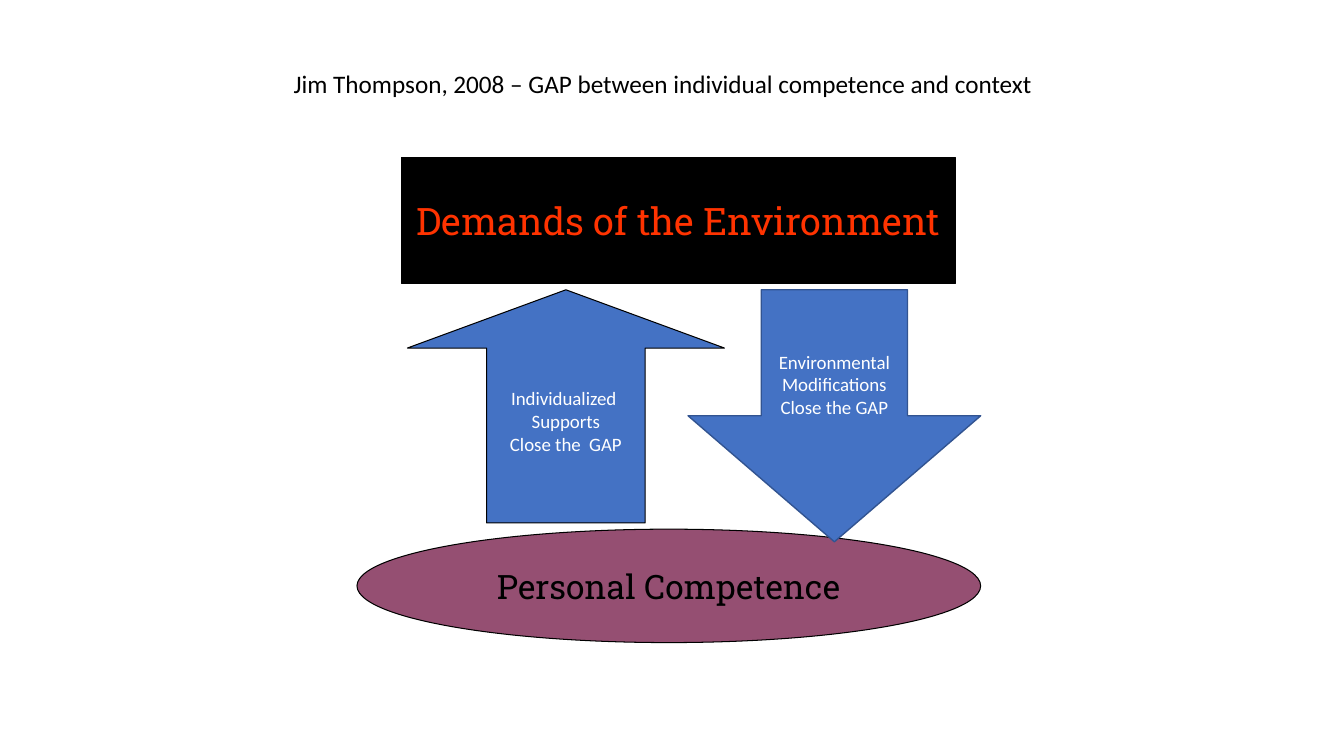
"""Build the slide on the gap between individual competence and context."""
from pptx import Presentation
from pptx.dml.color import RGBColor
from pptx.enum.shapes import MSO_SHAPE
from pptx.enum.text import MSO_ANCHOR, MSO_AUTO_SIZE, PP_ALIGN
from pptx.util import Pt

RECTANGLE, OVAL = MSO_SHAPE.RECTANGLE, MSO_SHAPE.OVAL
UP_ARROW, DOWN_ARROW = MSO_SHAPE.UP_ARROW, MSO_SHAPE.DOWN_ARROW
TOP, MIDDLE = MSO_ANCHOR.TOP, MSO_ANCHOR.MIDDLE
LEFT, CENTER = PP_ALIGN.LEFT, PP_ALIGN.CENTER
NO_AUTOFIT = MSO_AUTO_SIZE.NONE

BLACK = RGBColor(0x00, 0x00, 0x00)
WHITE = RGBColor(0xFF, 0xFF, 0xFF)
ORANGE_RED = RGBColor(0xFF, 0x33, 0x00)
BLUE = RGBColor(0x44, 0x72, 0xC4)
DARK_BLUE = RGBColor(0x32, 0x54, 0x91)
PLUM = RGBColor(0x95, 0x4F, 0x72)
BODY_FONT, SLAB_FONT = "Calibri", "Roboto Slab"


def write_text(shape, text, font_name, size, color, align, anchor, wrap):
    frame = shape.text_frame
    frame.text = text
    frame.auto_size = NO_AUTOFIT
    frame.word_wrap = wrap
    frame.vertical_anchor = anchor
    for para in frame.paragraphs:
        para.alignment = align
        para.font.name = font_name
        para.font.size = Pt(size)
        para.font.color.rgb = color


deck = Presentation()
deck.slide_width, deck.slide_height = Pt(960), Pt(540)
page = deck.slides.add_slide(deck.slide_layouts[5])

title = page.shapes.title
title.left, title.top, title.width, title.height = Pt(202.5), Pt(45), Pt(612.5), Pt(29)
write_text(title, "Jim Thompson, 2008 – GAP between individual competence and context",
           BODY_FONT, 18, BLACK, LEFT, TOP, True)

diagram = [
    (RECTANGLE, (286.5, 112.5, 396, 90), BLACK, BLACK, 0.75,
     "Demands of the Environment", SLAB_FONT, 27, ORANGE_RED, False),
    (UP_ARROW, (291, 207, 226.5, 166.5), BLUE, BLACK, 0.75,
     "Individualized \nSupports\nClose the  GAP", BODY_FONT, 13.5, WHITE, False),
    (OVAL, (255, 378, 445.5, 81), PLUM, BLACK, 0.75,
     "Personal Competence", SLAB_FONT, 24, BLACK, False),
    (DOWN_ARROW, (491.5, 207, 209, 180), BLUE, DARK_BLUE, 1,
     "Environmental Modifications Close the GAP", BODY_FONT, 13.5, WHITE, True),
]
for kind, bounds, fill, outline, weight, text, font_name, size, color, wrap in diagram:
    shape = page.shapes.add_shape(kind, *(Pt(length) for length in bounds))
    shape.shadow.inherit = False
    shape.fill.solid()
    shape.fill.fore_color.rgb = fill
    shape.line.color.rgb = outline
    shape.line.width = Pt(weight)
    if kind == UP_ARROW:
        shape.adjustments[1] = 0.25
    write_text(shape, text, font_name, size, color, CENTER, MIDDLE, wrap)

deck.save("out.pptx")
